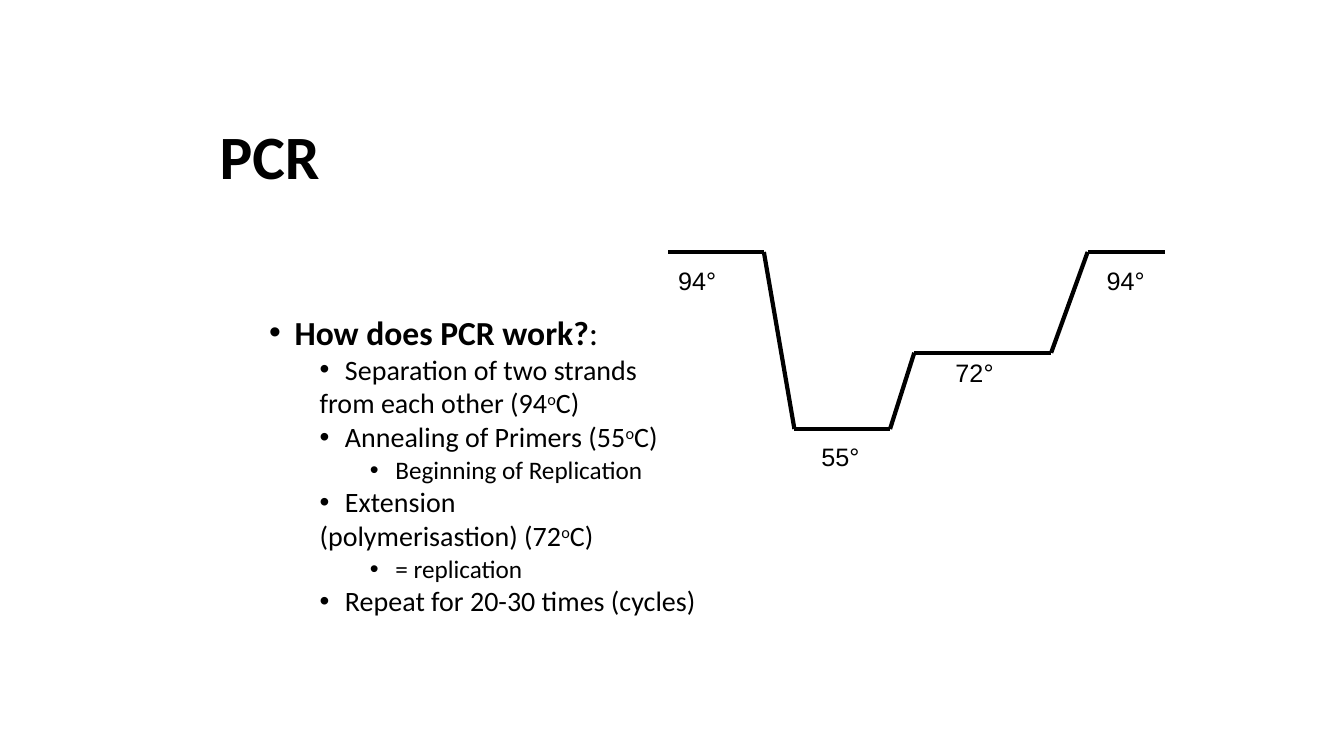
"""Build the PCR slide with its steps and temperature profile."""
from itertools import pairwise

from lxml.etree import SubElement
from pptx import Presentation
from pptx.dml.color import RGBColor
from pptx.enum.shapes import MSO_CONNECTOR as Connector
from pptx.enum.text import MSO_ANCHOR as Anchor, MSO_AUTO_SIZE as AutoSize, PP_ALIGN as Align
from pptx.oxml.ns import qn
from pptx.util import Cm, Pt

BLACK = "000000"
TITLE = "PCR"
TITLE_AREA = (5.28, 2.74, 21.59, 2.54)
BODY_AREA = (6.53, 7.92, 21.59, 7.82)

# level, bulleted, (text, style) spans
STEPS = [
    (0, True, [("How does PCR work?", "bold"), (":", "")]),
    (1, True, [("Separation of two strands", "")]),
    (1, False, [("from each other (94", ""), ("o", "raised"), ("C)", "")]),
    (1, True, [("Annealing of Primers (55", ""), ("o", "raised"), ("C)", "")]),
    (2, True, [("Beginning of Replication", "")]),
    (1, True, [("Extension", "")]),
    (1, False, [("(polymerisastion) (72", ""), ("o", "raised"), ("C)", "")]),
    (2, True, [("= replication", "")]),
    (1, True, [("Repeat for 20-30 times (cycles)", "")]),
]
LEVEL_SIZES = (24, 20, 18)
LEVEL_INDENTS = (0.64, 1.91, 3.18)
HANGING = 0.64

PROFILE = [(16.84, 6.35), (19.25, 6.35), (20.02, 10.81), (22.43, 10.81),
           (23.04, 8.89), (26.49, 8.89), (27.41, 6.35), (29.36, 6.35)]
LABELS = [("94°", 16.84, 6.55, 1.7), ("55°", 20.45, 11.0, 1.85),
          ("72°", 23.83, 8.89, 1.93), ("94°", 27.64, 6.55, 1.65)]
LABEL_HEIGHT = 1.02


def color(value):
    return RGBColor.from_string(value)


def set_font(para, name, size, bold=False):
    para.font.name = name
    para.font.size = Pt(size)
    para.font.bold = bold
    para.font.color.rgb = color(BLACK)


def place(shape, area):
    shape.left, shape.top, shape.width, shape.height = map(Cm, area)


def add_title(page):
    title = page.shapes.title
    place(title, TITLE_AREA)
    title.text_frame.text = TITLE
    title.text_frame.vertical_anchor = Anchor.MIDDLE
    title.text_frame.auto_size = AutoSize.NONE
    para = title.text_frame.paragraphs[0]
    para.alignment = Align.LEFT
    para.line_spacing = 0.9
    set_font(para, "Calibri", 44, True)


def set_bullet(para, level, bulleted):
    props = para._p.get_or_add_pPr()
    props.set("marL", str(Cm(LEVEL_INDENTS[level])))
    props.set("indent", str(-Cm(HANGING)))
    if bulleted:
        SubElement(props, qn("a:buFont"), typeface="Arial")
        SubElement(props, qn("a:buChar"), char="•")
    else:
        SubElement(props, qn("a:buNone"))


def add_steps(page):
    body = page.placeholders[1]
    place(body, BODY_AREA)
    frame = body.text_frame
    frame.auto_size = AutoSize.NONE
    for index, (level, bulleted, spans) in enumerate(STEPS):
        para = frame.add_paragraph() if index else frame.paragraphs[0]
        para.level = level
        para.line_spacing = 0.8
        para.space_before = Pt(5 if index else 0)
        set_bullet(para, level, bulleted)
        set_font(para, "Calibri", LEVEL_SIZES[level])
        for text, style in spans:
            span = para.add_run()
            span.text = text
            if style == "bold":
                span.font.bold = True
            elif style == "raised":
                span._r.get_or_add_rPr().set("baseline", "30000")


def add_profile(page):
    for start, end in pairwise(PROFILE):
        line = page.shapes.add_connector(Connector.STRAIGHT, *map(Cm, start + end))
        line.line.color.rgb = color(BLACK)
        line.line.width = Pt(3)
        SubElement(line._element.spPr, qn("a:effectLst"))
    for text, left, top, width in LABELS:
        box = page.shapes.add_textbox(*map(Cm, (left, top, width, LABEL_HEIGHT)))
        box.text_frame.word_wrap = True
        box.text_frame.text = text
        set_font(box.text_frame.paragraphs[0], "Arial", 18)


def main():
    deck = Presentation()
    deck.slide_width, deck.slide_height = Cm(33.87), Cm(19.05)
    page = deck.slides.add_slide(deck.slide_layouts[1])
    add_title(page)
    add_steps(page)
    add_profile(page)
    deck.save("out.pptx")


if __name__ == "__main__":
    main()
